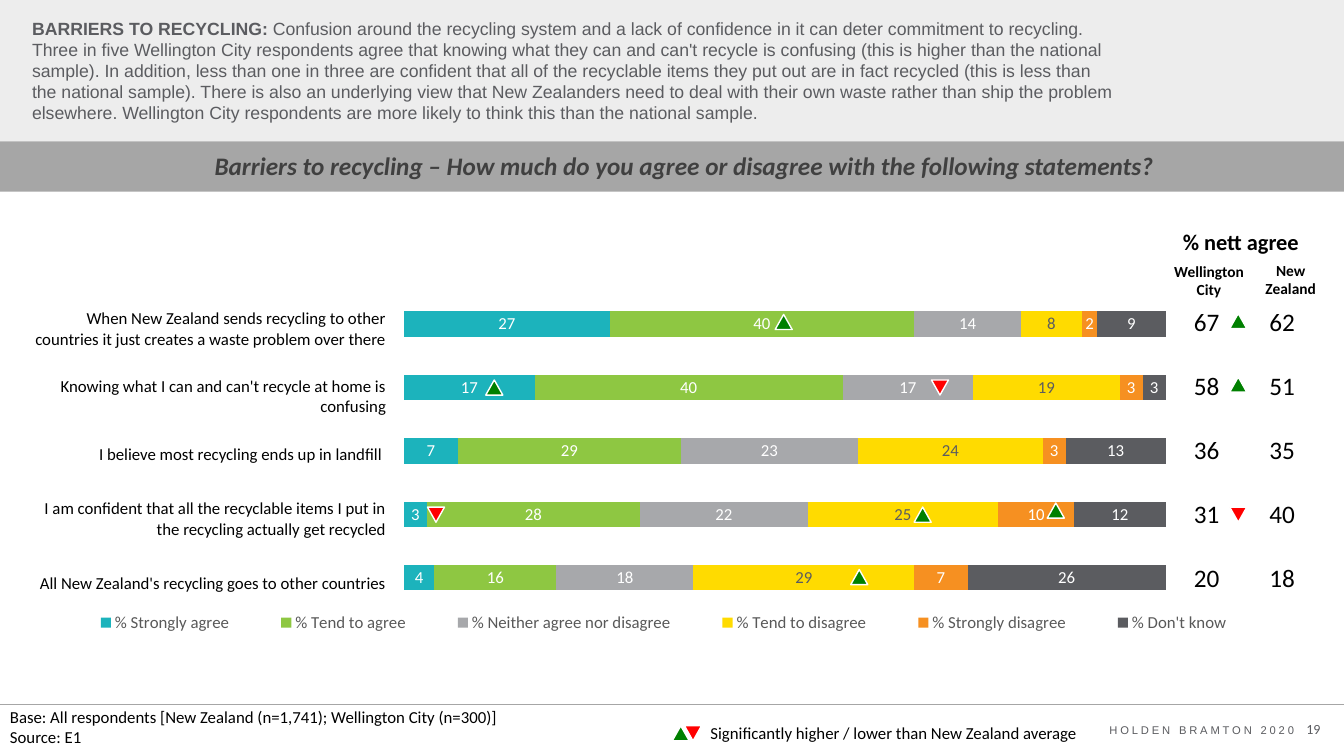
from lxml import etree
from pptx import Presentation
from pptx import util as u
from pptx.chart import data as cd
from pptx.dml.color import RGBColor
from pptx.enum import chart as ch, shapes as sh, text as tx
from pptx.oxml import ns

Pt = u.Pt
LEFT, MID, RIGHT = tx.PP_ALIGN.LEFT, tx.PP_ALIGN.CENTER, tx.PP_ALIGN.RIGHT
PLAIN = "{2D5ABB26-0587-4C30-8999-92F81FD0307C}"
hexa = RGBColor.from_string


def write(frame, paras, size, color="000000", face="Calibri", align=LEFT, bold=False):
    frame.word_wrap = True
    for i, runs in enumerate(paras):
        para = frame.paragraphs[0] if i == 0 else frame.add_paragraph()
        para.alignment = align
        for j, words in enumerate(runs):
            run = para.add_run()
            run.text = words
            run.font.size = Pt(size)
            run.font.name = face
            run.font.color.rgb = hexa(color)
            run.font.bold = bold and j == 0


def place(node, spot, x, y, w, h, inner=False):
    for old in node.findall(ns.qn("c:layout")):
        node.remove(old)
    lay = etree.Element(ns.qn("c:layout"))
    man = etree.SubElement(lay, ns.qn("c:manualLayout"))
    rows = [("layoutTarget", "inner")] if inner else []
    rows += [("xMode", "edge"), ("yMode", "edge"), ("x", x), ("y", y), ("w", w), ("h", h)]
    for tag, val in rows:
        etree.SubElement(man, ns.qn("c:" + tag)).set("val", str(val))
    node.insert(spot, lay)


prs = Presentation()
prs.slide_width, prs.slide_height = Pt(960), Pt(540)
slide = prs.slides.add_slide(prs.slide_layouts[6])
items = slide.shapes

for top, high, color in [(0, 101, "EDEDED"), (101, 36, "A6A6A6")]:
    band = items.add_shape(sh.MSO_SHAPE.RECTANGLE, Pt(0), Pt(top), Pt(960), Pt(high))
    band.shadow.inherit = False
    band.fill.solid()
    band.fill.fore_color.rgb = hexa(color)
    band.line.fill.background()

rule = items.add_connector(sh.MSO_CONNECTOR.STRAIGHT, Pt(0), Pt(503.2), Pt(960), Pt(503.2))
rule.line.color.rgb = hexa("A6A6A6")
rule.line.width = Pt(0.5)
etree.SubElement(rule._element.spPr, ns.qn("a:effectLst"))

title = items.add_textbox(Pt(15.8), Pt(10.8), Pt(788.4), Pt(78.5)).text_frame
title.vertical_anchor = tx.MSO_ANCHOR.MIDDLE
write(title, [[
    "BARRIERS TO RECYCLING: ",
    "Confusion around the recycling system and a lack of confidence in it can deter "
    "commitment to recycling. Three in five Wellington City respondents agree that "
    "knowing what they can and can't recycle is confusing (this is higher than the "
    "national sample). In addition, less than one in three are confident that all of "
    "the recyclable items they put out are in fact recycled (this is less than the "
    "national sample). There is also an underlying view that New Zealanders need to "
    "deal with their own waste rather than ship the problem elsewhere. Wellington City "
    "respondents are more likely to think this than the national sample.",
]], 12.6, "5B5C60", "Arial", bold=True)
title.paragraphs[0].line_spacing = Pt(15)

head = items.add_textbox(Pt(136.8), Pt(103.7), Pt(704), Pt(29)).text_frame
write(head, [["Barriers to recycling – How much do you agree or disagree with the following statements?"]],
      18, "404040", align=MID, bold=True)
head.paragraphs[0].runs[0].font.italic = True

series = [
    ("% Strongly agree", (27, 17, 7, 3, 4), "1CB3BC"),
    ("% Tend to agree", (40, 40, 29, 28, 16), "8EC742"),
    ("% Neither agree nor disagree", (14, 17, 23, 22, 18), "A7A8AB"),
    ("% Tend to disagree", (8, 19, 24, 25, 29), "FFDB00"),
    ("% Strongly disagree", (2, 3, 3, 10, 7), "F69021"),
    ("% Don't know", (9, 3, 13, 12, 26), "5B5C60"),
]
data = cd.CategoryChartData(number_format="0")
data.categories = ["1", "2", "3", "4", "5"]
for name, vals, color in series:
    data.add_series(name, vals)
chart = items.add_chart(ch.XL_CHART_TYPE.BAR_STACKED_100, Pt(30.2), Pt(166),
                        Pt(879), Pt(346.3), data).chart
chart.has_title = False
chart.font.name = "Calibri"
chart.font.size = Pt(10)
chart.font.color.rgb = hexa("000000")
chart.category_axis.reverse_order = True
chart.category_axis.visible = False
chart.value_axis.visible = False
chart.value_axis.has_major_gridlines = False
plot = chart.plots[0]
plot.gap_width, plot.overlap = 150, 100
plot.vary_by_categories = False
for bar, (name, vals, color) in zip(plot.series, series):
    bar.format.fill.solid()
    bar.format.fill.fore_color.rgb = hexa(color)
    label = bar.data_labels
    label.show_value = True
    label.position = ch.XL_LABEL_POSITION.CENTER
    label.font.size = Pt(12)
    label.font.name = "Calibri"
    label.font.color.rgb = hexa("5B5C60" if color == "FFDB00" else "FFFFFF")
chart.has_legend = True
legend = chart.legend
legend.position = ch.XL_LEGEND_POSITION.BOTTOM
legend.include_in_layout = False
legend.font.size = Pt(12)
legend.font.name = "Calibri"
legend.font.color.rgb = hexa("595959")
place(chart._chartSpace.chart.plotArea, 0, 0.294, 0.124, 0.619, 0.654, True)
place(legend._element, 1, 0.01, 0.77, 0.99, 0.07)

claims = [
    "When New Zealand sends recycling to other countries it just creates a waste problem over there",
    "Knowing what I can and can't recycle at home is confusing",
    "I believe most recycling ends up in landfill ",
    "I am confident that all the recyclable items I put in the recycling actually get recycled",
    "All New Zealand's recycling goes to other countries",
]
even = [45.8] * 5
tables = [
    (15.8, 209.5, 260.6, [50.4, 46, 37.4, 54.7, 37.4], claims),
    (843.1, 216, 37.4, even, ["67", "58", "36", "31", "20"]),
    (897.1, 216, 37.4, even, ["62", "51", "35", "40", "18"]),
]
for left, top, wide, highs, words in tables:
    grid = items.add_table(5, 1, Pt(left), Pt(top), Pt(wide), Pt(sum(highs))).table
    grid.first_row = grid.horz_banding = False
    grid._tbl.tblPr.find(ns.qn("a:tableStyleId")).text = PLAIN
    grid.columns[0].width = Pt(wide)
    for i, high in enumerate(highs):
        grid.rows[i].height = Pt(high)
        cell = grid.cell(i, 0)
        if words is claims:
            cell.fill.solid()
            cell.fill.fore_color.rgb = hexa("FFFFFF")
            cell.vertical_anchor = tx.MSO_ANCHOR.MIDDLE
            cell.margin_left = cell.margin_right = cell.margin_top = Pt(0.7)
            cell.margin_bottom = Pt(0)
            write(cell.text_frame, [[words[i]]], 12, align=RIGHT)
        else:
            cell.fill.background()
            write(cell.text_frame, [[words[i]]], 18, align=MID)

notes = [
    (793.4, 159.1, 185.8, 26.6, ["% nett agree"], 16, MID, True),
    (800.6, 183.6, 126, 33.8, ["Wellington", "City"], 11, MID, True),
    (881.3, 182.9, 81.4, 33.8, ["New", "Zealand"], 11, MID, True),
    (0, 501.1, 418.3, 36, ["Base: All respondents [New Zealand (n=1,741); Wellington City (n=300)]",
                           "Source: E1"], 12, LEFT, False),
    (500.4, 512.6, 299.5, 21.6, ["Significantly higher / lower than New Zealand average"], 12, LEFT, False),
]
for left, top, wide, high, lines, size, align, bold in notes:
    box = items.add_textbox(Pt(left), Pt(top), Pt(wide), Pt(high))
    write(box.text_frame, [[line] for line in lines], size, align=align, bold=bold)

ups = [(480.2, 518.4), (607.7, 406.8), (553.7, 224.6), (878.4, 269.3), (878.4, 223.9),
       (347, 271.4), (653, 362.2), (748.1, 359.3)]
downs = [(488.9, 518.4), (878.4, 362.2), (665.3, 271.4), (305.3, 362.2)]
for spots, color, turn in [(ups, "008000", 0), (downs, "FF0000", 180)]:
    for left, top in spots:
        mark = items.add_shape(sh.MSO_SHAPE.ISOSCELES_TRIANGLE, Pt(left), Pt(top), Pt(12.2), Pt(10.8))
        mark.shadow.inherit = False
        mark.rotation = turn
        mark.fill.solid()
        mark.fill.fore_color.rgb = hexa(color)
        mark.line.color.rgb = hexa("FFFFFF")
        mark.line.width = Pt(1)

firm = items.add_textbox(Pt(770.4), Pt(507.6), Pt(161.3), Pt(28)).text_frame
firm.vertical_anchor = tx.MSO_ANCHOR.MIDDLE
write(firm, [["HOLDEN BRAMTON 2020"]], 8, "5B5C60", "Arial", RIGHT)
firm.paragraphs[0].runs[0]._r.get_or_add_rPr().set("spc", "200")
page = items.add_textbox(Pt(917.3), Pt(511.2), Pt(33), Pt(19.4)).text_frame
write(page, [["19"]], 10, "5B5C60", align=RIGHT)

prs.save("out.pptx")
